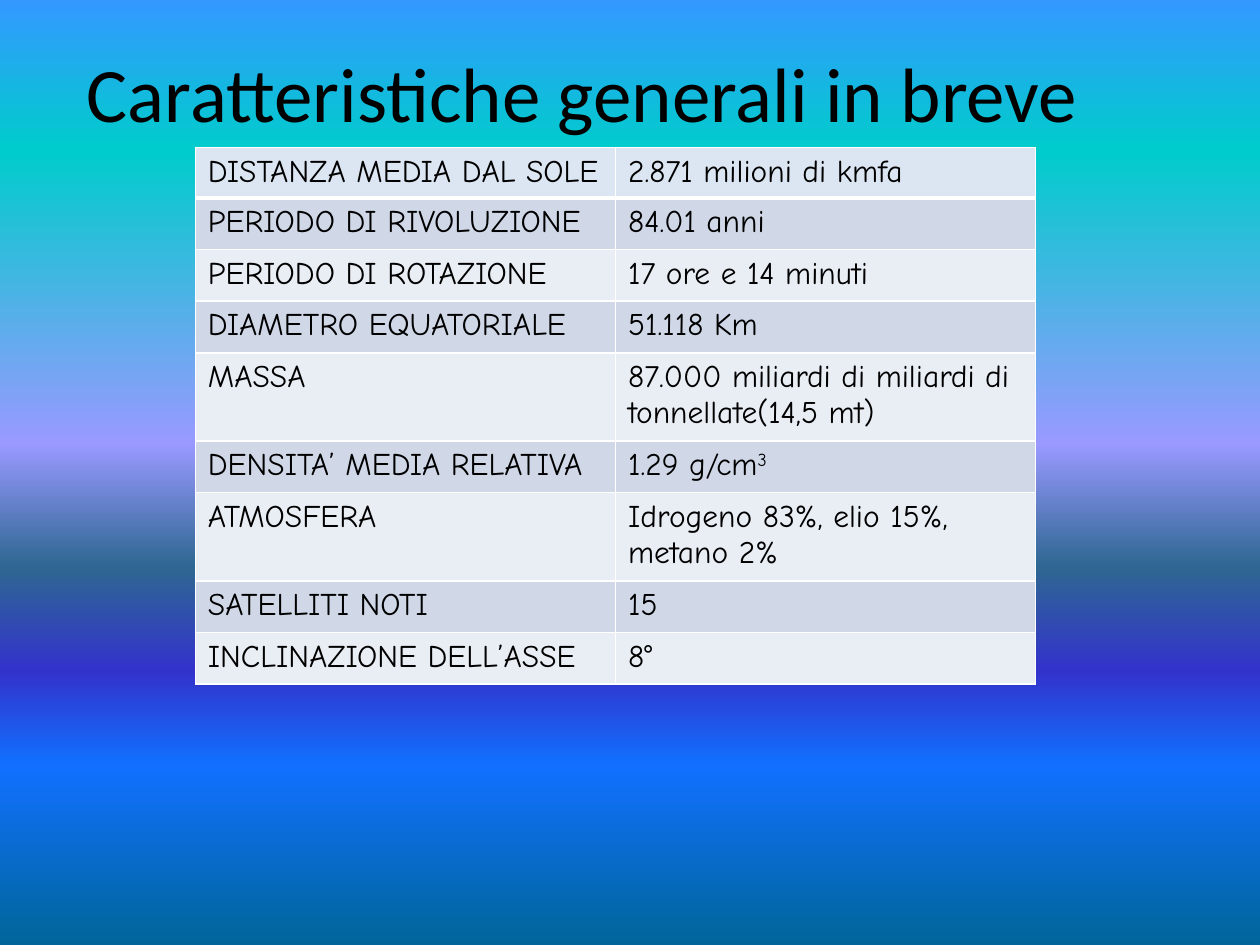
from lxml import etree
from pptx import Presentation
from pptx.dml.color import RGBColor
from pptx.enum.text import MSO_ANCHOR, MSO_AUTO_SIZE, PP_ALIGN
from pptx.oxml.ns import qn
from pptx.util import Inches, Pt

LEFT = PP_ALIGN.LEFT
TOP = MSO_ANCHOR.TOP
FIT_SHAPE = MSO_AUTO_SIZE.SHAPE_TO_FIT_TEXT
TITLE_ONLY = 5

COLOURS = {
    "text": "000000",
    "border": "FFFFFF",
    "header": "DCE6F2",
    "dark band": "D0D8E8",
    "light band": "E9EDF4",
}
# Position in percent and colour, from the top of the slide down
SKY = [(0, "3399FF"), (16, "00CCCC"), (47, "9999FF"), (60, "2E6792"),
       (71, "3333CC"), (81, "1170FF"), (100, "006699")]

ROW_HEIGHT, TALL_ROW_HEIGHT = 0.41, 0.7
# Label, value, superscript after the value, row height
FACTS = [
    ("DISTANZA MEDIA DAL SOLE", "2.871 milioni di kmfa", "", 0.4),
    ("PERIODO DI RIVOLUZIONE", "84.01 anni", "", ROW_HEIGHT),
    ("PERIODO DI ROTAZIONE", "17 ore e 14 minuti", "", ROW_HEIGHT),
    ("DIAMETRO EQUATORIALE", "51.118 Km", "", ROW_HEIGHT),
    ("MASSA", "87.000 miliardi di miliardi di tonnellate(14,5 mt)", "",
     TALL_ROW_HEIGHT),
    ("DENSITA’ MEDIA RELATIVA", "1.29 g/cm", "3", ROW_HEIGHT),
    ("ATMOSFERA", "Idrogeno 83%, elio 15%, metano 2%", "", TALL_ROW_HEIGHT),
    ("SATELLITI NOTI", "15", "", ROW_HEIGHT),
    ("INCLINAZIONE DELL’ASSE", "8°", "", ROW_HEIGHT),
]


class SlideBuilder:
    title_font, title_size = "Calibri", 44
    table_font, table_size = "Comic Neue", 18

    def __init__(self, slide):
        self.slide = slide

    def set_font(self, para, name, size):
        para.font.name = name
        para.font.size = Pt(size)
        para.font.color.rgb = RGBColor.from_string(COLOURS["text"])

    def gradient_background(self, stops):
        fill = self.slide.background.fill
        fill.gradient()
        fill.gradient_angle = 270
        stop_list = self.slide.element.xpath(".//a:gsLst")[0]
        for old_stop in list(stop_list):
            stop_list.remove(old_stop)
        for percent, colour in stops:
            stop = etree.SubElement(stop_list, qn("a:gs"), pos=str(percent * 1000))
            etree.SubElement(stop, qn("a:srgbClr"), val=colour)

    def title(self, text, left, top, width, height):
        box = self.slide.shapes.title
        box.left, box.top = Inches(left), Inches(top)
        box.width, box.height = Inches(width), Inches(height)
        frame = box.text_frame
        frame.text = text
        frame.word_wrap = True
        frame.auto_size = FIT_SHAPE
        frame.vertical_anchor = TOP
        para = frame.paragraphs[0]
        para.alignment = LEFT
        self.set_font(para, self.title_font, self.title_size)

    def cell_borders(self, cell, top, bottom):
        """Draw the four sides; top and bottom are widths in points."""
        properties = cell._tc.get_or_add_tcPr()
        for side, width in (("L", 1), ("R", 1), ("T", top), ("B", bottom)):
            line = etree.SubElement(properties, qn(f"a:ln{side}"), w=str(Pt(width)))
            fill = etree.SubElement(line, qn("a:solidFill"))
            etree.SubElement(fill, qn("a:srgbClr"), val=COLOURS["border"])

    def table_cell(self, cell, text, superscript, colour):
        para = cell.text_frame.paragraphs[0]
        para.add_run().text = text
        if superscript:
            span = para.add_run()
            span.text = superscript
            span.font._element.set("baseline", "30000")
        self.set_font(para, self.table_font, self.table_size)
        cell.fill.solid()
        cell.fill.fore_color.rgb = RGBColor.from_string(COLOURS[colour])

    def fact_table(self, facts, left, top, width):
        height = sum(fact[-1] for fact in facts)
        table = self.slide.shapes.add_table(
            len(facts), 2, Inches(left), Inches(top), Inches(width), Inches(height)
        ).table
        table.first_row = table.horz_banding = False
        for index, (label, value, superscript, row_height) in enumerate(facts):
            table.rows[index].height = Inches(row_height)
            band = "dark band" if index % 2 else "light band"
            colour = band if index else "header"
            for column, content in enumerate([(label, ""), (value, superscript)]):
                cell = table.cell(index, column)
                self.cell_borders(cell, top=3 if index == 1 else 1,
                                  bottom=3 if index == 0 else 1)
                self.table_cell(cell, *content, colour)


def main():
    deck = Presentation()
    deck.slide_width, deck.slide_height = Inches(10), Inches(7.5)
    page = SlideBuilder(deck.slides.add_slide(deck.slide_layouts[TITLE_ONLY]))
    page.gradient_background(SKY)
    page.title("Caratteristiche generali in breve", 0.59, 0.31, 8.59, 0.84)
    page.fact_table(FACTS, 1.55, 1.17, 6.67)
    deck.save("out.pptx")


if __name__ == "__main__":
    main()
